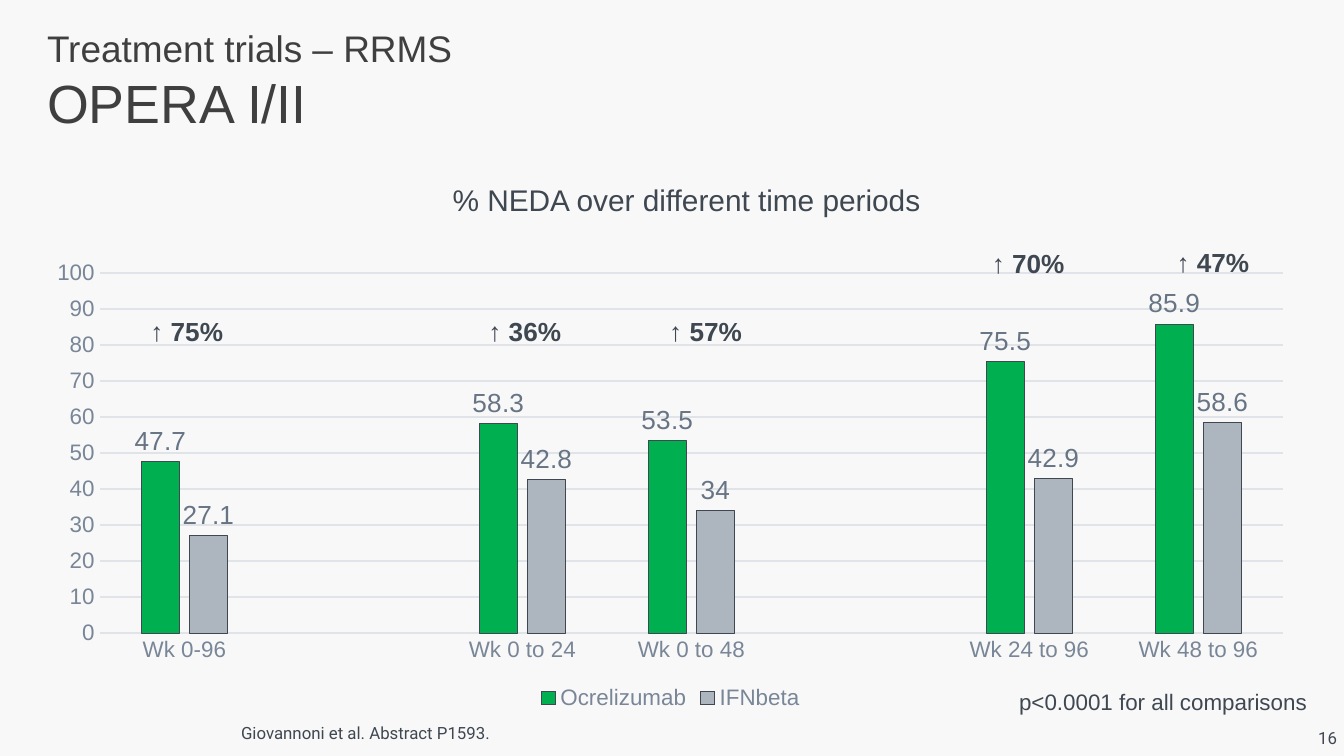
from lxml.etree import SubElement
from pptx import Presentation
from pptx.chart.data import CategoryChartData
from pptx.dml.color import RGBColor
from pptx.enum.chart import XL_CHART_TYPE, XL_LABEL_POSITION, XL_LEGEND_POSITION, XL_TICK_MARK
from pptx.enum.text import MSO_ANCHOR, MSO_AUTO_SIZE, PP_ALIGN
from pptx.oxml.ns import qn
from pptx.util import Inches, Pt

INK, TITLE_INK, MUTED, LABEL_INK, GRID = "3F4751", "3F3F3F", "798697", "677484", "E0E3E7"
CATEGORIES = ["Wk 0-96", "", "Wk 0 to 24", "Wk 0 to 48", "", "Wk 24 to 96", "Wk 48 to 96"]
SERIES = {
    "Ocrelizumab": ("00B050", [47.7, None, 58.3, 53.5, None, 75.5, 85.9]),
    "IFNbeta": ("ADB5BF", [27.1, None, 42.8, 34, None, 42.9, 58.6]),
}
# text, centre and top as percentages of the slide
INCREASES = [
    ("↑ 75%", 13.9, 40.8),
    ("↑ 36%", 39.05, 40.9),
    ("↑ 57%", 52.5, 40.9),
    ("↑ 70%", 76.5, 31.8),
    ("↑ 47%", 90.25, 31.7),
]
# percentages of the chart frame
PLOT_AREA = {"x": 5.3, "y": 4.7, "w": 92.65, "h": 77.6}


def color(hex_value):
    return RGBColor.from_string(hex_value)


def set_font(font, hex_value, **values):
    for name, value in {"name": "Arial", **values}.items():
        setattr(font, name, Pt(value) if name == "size" else value)
    font.color.rgb = color(hex_value)


def set_line(line, hex_value, width):
    line.color.rgb = color(hex_value)
    line.width = Pt(width)


def fix_plot_area(chart):
    """Pin the inner plot area to PLOT_AREA."""
    plot_area = chart._chartSpace.chart.plotArea
    for layout in plot_area.findall(qn("c:layout")):
        plot_area.remove(layout)
    layout = plot_area.makeelement(qn("c:layout"))
    plot_area.insert(0, layout)
    manual = SubElement(layout, qn("c:manualLayout"))
    shares = {name: value / 100 for name, value in PLOT_AREA.items()}
    settings = {"layoutTarget": "inner", "xMode": "edge", "yMode": "edge", **shares}
    for name, value in settings.items():
        SubElement(manual, qn(f"c:{name}")).set("val", str(value))


class Deck:
    """Holds the presentation style and the current slide; lengths are percentages."""

    def __init__(self, background):
        self.presentation = Presentation()
        self.presentation.slide_width = Inches(10)
        self.presentation.slide_height = Inches(10) * 9 // 16
        self.slide = self.presentation.slides.add_slide(self.presentation.slide_layouts[5])
        fill = self.slide.background.fill
        fill.solid()
        fill.fore_color.rgb = color(background)

    def box(self, left, top, width, height):
        across = self.presentation.slide_width / 100
        down = self.presentation.slide_height / 100
        return [round(v) for v in (left * across, top * down, width * across, height * down)]

    def title(self, lines, *place):
        shape = self.slide.shapes.title
        shape.left, shape.top, shape.width, shape.height = self.box(*place)
        frame = shape.text_frame
        frame.auto_size = MSO_AUTO_SIZE.NONE
        frame.vertical_anchor = MSO_ANCHOR.MIDDLE
        frame.margin_right = Inches(0.05)
        paragraph = frame.paragraphs[0]
        paragraph.alignment = PP_ALIGN.LEFT
        for index, (text, size) in enumerate(lines):
            if index:
                paragraph.add_line_break()
            run = paragraph.add_run()
            run.text = text
            set_font(run.font, TITLE_INK, size=size)

    def text(self, text, *place, align=PP_ALIGN.LEFT, frame_format=None, **font):
        frame = self.slide.shapes.add_textbox(*self.box(*place)).text_frame
        for name, value in {"word_wrap": True, **(frame_format or {})}.items():
            setattr(frame, name, value)
        paragraph = frame.paragraphs[0]
        paragraph.alignment = align
        run = paragraph.add_run()
        run.text = text
        set_font(run.font, INK, **font)

    def column_chart(self, *place):
        data = CategoryChartData()
        data.categories = CATEGORIES
        for name, (_, values) in SERIES.items():
            data.add_series(name, values)
        chart = self.slide.shapes.add_chart(
            XL_CHART_TYPE.COLUMN_CLUSTERED, *self.box(*place), data
        ).chart
        set_font(chart.font, INK, size=10)
        chart.has_title = False
        chart.has_legend = True
        chart.legend.position = XL_LEGEND_POSITION.BOTTOM
        chart.legend.include_in_layout = False
        set_font(chart.legend.font, MUTED, size=12)
        self.style_axes(chart)
        self.style_columns(chart.plots[0])
        fix_plot_area(chart)

    def style_axes(self, chart):
        for axis in (chart.category_axis, chart.value_axis):
            axis.major_tick_mark = axis.minor_tick_mark = XL_TICK_MARK.NONE
            set_font(axis.tick_labels.font, MUTED, size=12)
        set_line(chart.category_axis.format.line, GRID, 0.75)
        value_axis = chart.value_axis
        scale = {"minimum_scale": 0, "maximum_scale": 100, "major_unit": 10}
        for name, value in scale.items():
            setattr(value_axis, name, value)
        value_axis.format.line.fill.background()
        set_line(value_axis.major_gridlines.format.line, GRID, 0.75)

    def style_columns(self, plot):
        plot.gap_width, plot.overlap = 219, -27
        plot.vary_by_categories = False
        for series in plot.series:
            series.format.fill.solid()
            series.format.fill.fore_color.rgb = color(SERIES[series.name][0])
            set_line(series.format.line, INK, 0.25)
            labels = series.data_labels
            labels.show_value = True
            labels.position = XL_LABEL_POSITION.OUTSIDE_END
            set_font(labels.font, LABEL_INK, size=14)


def main():
    deck = Deck("F8F8F8")
    deck.title([("Treatment trials – RRMS", 19.8), ("OPERA I/II", 28.8)], 2.5, 2.2, 95, 16.7)
    deck.text("16", 97.1, 95.1, 2.9, 4.1, name="Roboto", size=9, frame_format={
        "vertical_anchor": MSO_ANCHOR.MIDDLE, "margin_right": 0, "margin_bottom": 0})
    deck.text("Giovannoni et al. Abstract P1593.", 16.95, 94.7, 65.8, 4.4,
              name="Roboto", size=9, frame_format={"vertical_anchor": MSO_ANCHOR.BOTTOM})
    deck.text("% NEDA over different time periods", 6.3, 23.1, 89.6, 6.6,
              align=PP_ALIGN.CENTER, size=16)
    deck.column_chart(2.4, 33.25, 95, 61.35)
    width = 8.5
    for text, centre, top in INCREASES:
        deck.text(text, centre - width / 2, top, width, 6,
                  align=PP_ALIGN.CENTER, size=14, bold=True)
    deck.text("p<0.0001 for all comparisons", 69.35, 90.2, 28.9, 5.3,
              align=PP_ALIGN.RIGHT, size=12)
    deck.presentation.save("out.pptx")


if __name__ == "__main__":
    main()
